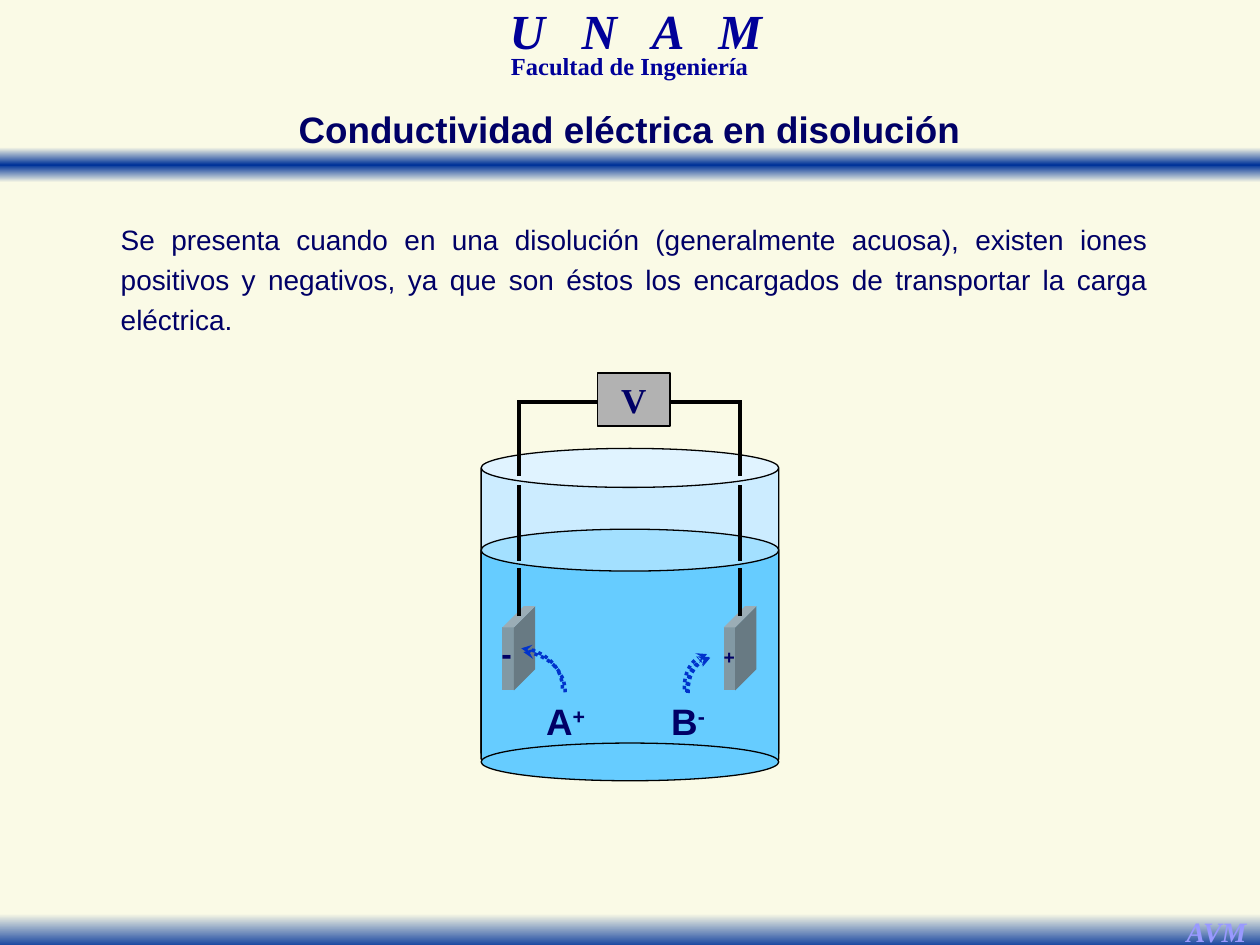
from lxml.etree import SubElement
from pptx import Presentation
from pptx.dml.color import RGBColor
from pptx.enum.dml import MSO_LINE
from pptx.enum.shapes import MSO_CONNECTOR, MSO_SHAPE
from pptx.enum.text import MSO_ANCHOR, MSO_AUTO_SIZE, PP_ALIGN
from pptx.oxml.ns import qn
from pptx.util import Cm, Pt

THEME = {
    "sans": "Arial", "serif": "Times New Roman",
    "cream": "FAFAE6", "band": "003399", "header": "000099", "ink": "000066",
    "signature": "9999FF", "glass": "CCECFF", "liquid": "66CCFF",
    "plate": "8299A4", "meter": "B2B2B2", "black": "000000", "ion_path": "0033CC",
    "university": 28, "faculty": 14, "author": 16, "title": 21, "body": 16,
    "volt": 20, "ion": 21, "plus": 11, "minus": 18, "outline": 0.75, "wire": 2,
}

TITLE = ("Conductividad eléctrica en disolución", (5.69, 2.03, 14, 1.14))
BODY = ("Se presenta cuando en una disolución (generalmente acuosa), existen iones "
        "positivos y negativos, ya que son éstos los encargados de transportar la "
        "carga eléctrica.", (2.18, 4.22, 21.21, 2.72))

# Boxes are left, top, width, height in centimetres.
BANDS = [
    ((0, 2.97, 25.4, 0.71), [(0, "cream"), (50, "band"), (100, "cream")]),
    ((0, 18.42, 25.4, 0.71), [(0, "cream"), (100, "band")]),
]
# Text, box, size, colour, italic, line spacing, letter spacing in points
HEADINGS = [
    ("U N A M", (7.84, 0.2, 9.96, 1.09), "university", "header", True, 0.7, 7),
    ("Facultad de Ingeniería", (8.15, 1.07, 9.09, 0.66), "faculty", "header", False, 0.7, 0),
    ("AVM", (23.65, 18.31, 1.75, 0.94), "author", "signature", True, 1, 0),
]
# Preset, box, fill, height of the rim
VESSEL = [
    (MSO_SHAPE.CAN, (9.7, 9.04, 6, 6.53), "glass", 0.131),
    (MSO_SHAPE.CAN, (9.7, 10.67, 6, 5.05), "liquid", 0.167),
    (MSO_SHAPE.OVAL, (9.7, 14.98, 6, 0.76), "liquid", None),
]
IONS = [("A", "+", (10.74, 13.97, 1.32, 1.14)), ("B", "-", (13.26, 13.97, 1.22, 1.14))]
WIRES_X = (10.46, 14.92)
WIRE_SPANS = [(8.08, 9.6), (9.78, 11.3), (11.46, 12.42)]
WIRE_TOP = 8.1
PLATE_OFFSET, PLATE_TOP, PLATE_SIZE, PLATE_DEPTH = -0.33, 12.22, (0.66, 1.7), 0.65
METER = ("V", (12.04, 7.52, 1.47, 1.07))
POLES = [("+", (14.33, 12.88, 0.74, 0.71), "plus"), ("-", (9.86, 12.65, 0.71, 1.02), "minus")]
# Unrotated start, end, and the turn in degrees
ION_PATHS = [
    ((13.74, 13.39), (14.45, 13.84), 270),
    ((11.33, 13.06), (10.52, 13.89), 90),
    ((13.67, 13.31), (14.38, 13.77), 270),
    ((11.38, 13.13), (10.57, 13.97), 90),
    ((13.72, 13.37), (14.43, 13.83), 270),
]


def color(name):
    return RGBColor.from_string(THEME[name])


def style_font(font, size, ink="ink", face="sans", bold=True, italic=False):
    font.name, font.size = THEME[face], Pt(THEME[size])
    font.bold, font.italic = bold, italic
    font.color.rgb = color(ink)


def add_preset(slide, preset, box, fill=None, outlined=False):
    shape = slide.shapes.add_shape(preset, *map(Cm, box))
    shape.shadow.inherit = False
    if fill:
        shape.fill.solid()
        shape.fill.fore_color.rgb = color(fill)
    if outlined:
        shape.line.color.rgb = color("black")
        shape.line.width = Pt(THEME["outline"])
    else:
        shape.line.fill.background()
    return shape


def add_band(slide, box, stops):
    band = add_preset(slide, MSO_SHAPE.RECTANGLE, box)
    band.fill.gradient()
    band.fill.gradient_angle = 270
    stop_list = next(band._element.spPr.iter(qn("a:gsLst")))
    stop_list.clear()
    for percent, name in stops:
        stop = SubElement(stop_list, qn("a:gs"), pos=str(percent * 1000))
        SubElement(stop, qn("a:srgbClr"), val=THEME[name])


def add_label(slide, text, box, size, **font_style):
    """Add centred, unwrapped text and return its paragraph."""
    frame = slide.shapes.add_textbox(*map(Cm, box)).text_frame
    frame.word_wrap = False
    paragraph = frame.paragraphs[0]
    paragraph.text = text
    paragraph.alignment = PP_ALIGN.CENTER
    style_font(paragraph.runs[0].font, size, **font_style)
    return paragraph


def add_line(slide, start, end, ink="black", kind=MSO_CONNECTOR.STRAIGHT):
    line = slide.shapes.add_connector(kind, *map(Cm, (*start, *end)))
    line.line.color.rgb = color(ink)
    line.line.width = Pt(THEME["wire"])
    SubElement(line._element.spPr, qn("a:effectLst"))
    return line


def add_ion_path(slide, start, end, turn):
    ion_path = add_line(slide, start, end, "ion_path", MSO_CONNECTOR.CURVE)
    ion_path.line.dash_style = MSO_LINE.ROUND_DOT
    properties = ion_path._element.spPr
    properties.find(qn("a:xfrm")).set("rot", str(turn * 60000))
    properties.find(qn("a:prstGeom")).set("prst", "curvedConnector2")
    SubElement(properties.find(qn("a:ln")), qn("a:tailEnd"), type="stealth")


def fill_placeholder(placeholder, text, box, size, alignment, bold):
    placeholder.left, placeholder.top, placeholder.width, placeholder.height = map(Cm, box)
    frame = placeholder.text_frame
    frame.text = text
    frame.auto_size = MSO_AUTO_SIZE.NONE
    frame.vertical_anchor = MSO_ANCHOR.TOP
    paragraph = frame.paragraphs[0]
    paragraph.alignment = alignment
    paragraph.space_before = Pt(0)
    style_font(paragraph.runs[0].font, size, bold=bold)
    return paragraph


def add_text(slide):
    fill_placeholder(slide.shapes.title, *TITLE, "title", PP_ALIGN.CENTER, True)
    body = fill_placeholder(slide.placeholders[1], *BODY, "body", PP_ALIGN.JUSTIFY, False)
    body.line_spacing = 1.2
    body.space_after = Pt(8)
    layout = body._p.get_or_add_pPr()
    layout.set("marL", "0")
    layout.set("indent", "0")
    SubElement(layout, qn("a:buNone"))
    for text, box, size, ink, italic, line_spacing, letter_spacing in HEADINGS:
        heading = add_label(slide, text, box, size, ink=ink, face="serif", italic=italic)
        heading.line_spacing = line_spacing
        if letter_spacing:
            heading.runs[0].font._element.set("spc", str(letter_spacing * 100))


def add_cell(slide):
    """Draw the vessel, its circuit and the moving ions."""
    for preset, box, fill, rim in VESSEL:
        part = add_preset(slide, preset, box, fill, outlined=True)
        if rim:
            part.adjustments[0] = rim
    for ion, charge, box in IONS:
        label = add_label(slide, ion, box, "ion")
        superscript = label.add_run()
        superscript.text = charge
        style_font(superscript.font, "ion")
        superscript.font._element.set("baseline", "30000")
    for x in WIRES_X:
        plate = add_preset(slide, MSO_SHAPE.CUBE, (x + PLATE_OFFSET, PLATE_TOP, *PLATE_SIZE), "plate")
        plate.adjustments[0] = PLATE_DEPTH
        for top, bottom in WIRE_SPANS:
            add_line(slide, (x, bottom), (x, top))
    left, right = WIRES_X
    add_line(slide, (right + 0.04, WIRE_TOP), (left - 0.04, WIRE_TOP))
    symbol, box = METER
    meter = add_preset(slide, MSO_SHAPE.RECTANGLE, box, "meter", outlined=True)
    meter.text_frame.text = symbol
    meter.text_frame.word_wrap = False
    meter.text_frame.vertical_anchor = MSO_ANCHOR.MIDDLE
    volt = meter.text_frame.paragraphs[0]
    volt.alignment = PP_ALIGN.CENTER
    style_font(volt.runs[0].font, "volt", face="serif")
    for pole in POLES:
        add_label(slide, *pole)
    for route in ION_PATHS:
        add_ion_path(slide, *route)


def main():
    deck = Presentation()
    deck.slide_width, deck.slide_height = Cm(25.4), Cm(19.05)
    slide = deck.slides.add_slide(deck.slide_layouts[1])
    slide.background.fill.solid()
    slide.background.fill.fore_color.rgb = color("cream")
    for box, stops in BANDS:
        add_band(slide, box, stops)
    add_text(slide)
    add_cell(slide)
    deck.save("out.pptx")


if __name__ == "__main__":
    main()
